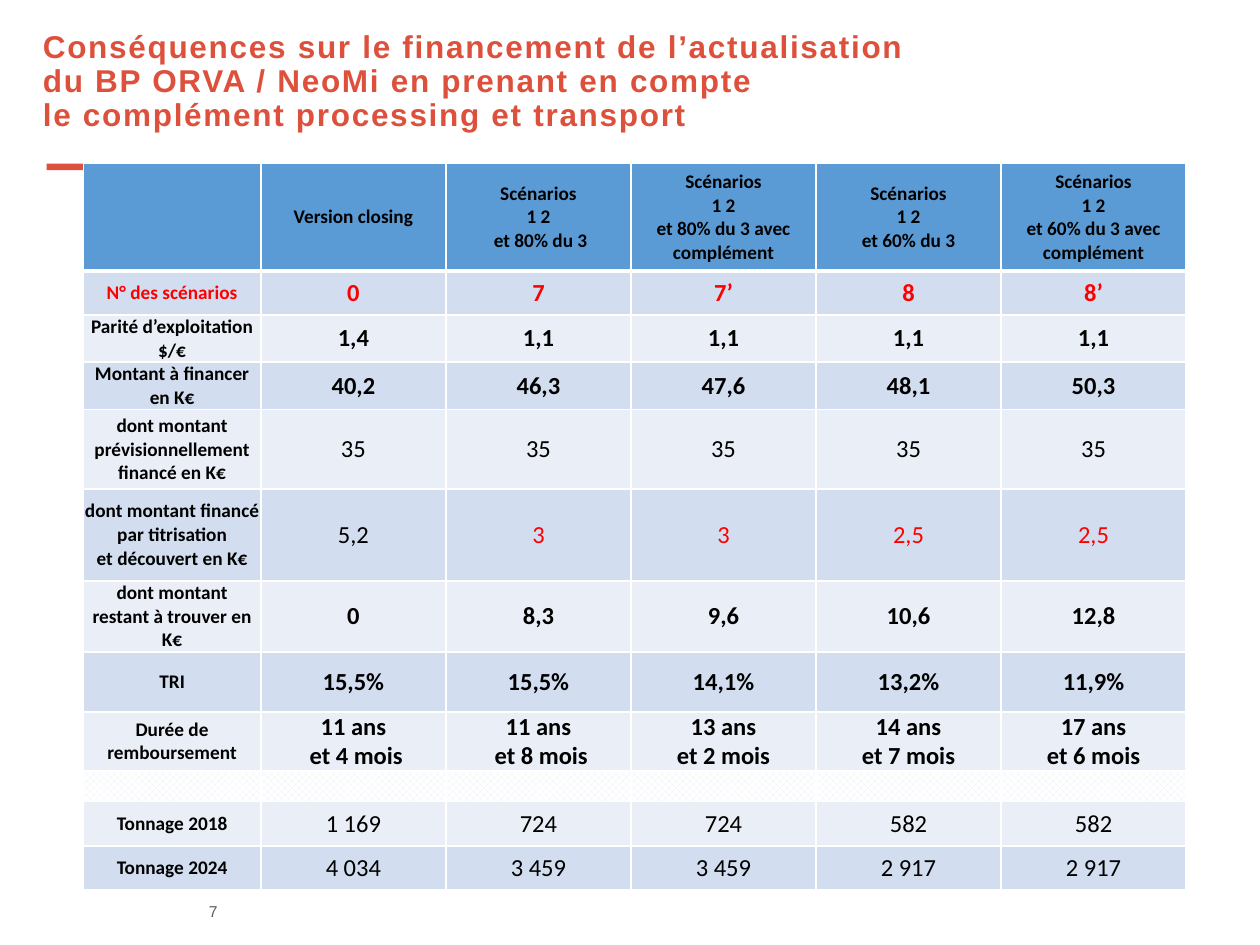
from dataclasses import dataclass

import lxml.etree
import pptx
import pptx.dml.color
import pptx.enum.dml
import pptx.enum.shapes
import pptx.enum.text
import pptx.oxml.ns
import pptx.util
from pptx.util import Cm

ALIGN = pptx.enum.text.PP_ALIGN
ANCHOR = pptx.enum.text.MSO_ANCHOR


@dataclass(frozen=True)
class Theme:
    heading_font: str = "Arial"
    body_font: str = "Calibri"
    accent: str = "DD503C"
    header: str = "5B9BD5"
    band_dark: str = "D2DEEF"
    band_light: str = "EAEFF7"
    white: str = "FFFFFF"
    text: str = "000000"
    alert: str = "FF0000"
    muted: str = "5F5F5F"
    title_size: int = 18
    label_size: int = 11
    value_size: int = 14
    number_size: int = 9
    border: int = 1
    header_border: int = 3


@dataclass(frozen=True)
class Row:
    height: float
    cells: tuple = ()
    bold: bool = True
    red_from: int = 99  # first column written in the alert colour


ROWS = (
    Row(2.16, ("", "Version closing",
               "Scénarios\n1 2\n et 80% du 3",
               "Scénarios\n1 2\net 80% du 3 avec complément",
               "Scénarios\n1 2\net 60% du 3",
               "Scénarios\n1 2\net 60% du 3 avec complément")),
    Row(0.89, ("N° des scénarios", "0", "7", "7’", "8", "8’"), red_from=0),
    Row(0.95, ("Parité d’exploitation $/€", "1,4", "1,1", "1,1", "1,1", "1,1")),
    Row(0.96, ("Montant à financer\nen K€", "40,2", "46,3", "47,6", "48,1", "50,3")),
    Row(1.6, ("dont montant prévisionnellement financé en K€",
              "35", "35", "35", "35", "35"), bold=False),
    Row(1.85, ("dont montant financé par titrisation\net découvert en K€",
               "5,2", "3", "3", "2,5", "2,5"), bold=False, red_from=2),
    Row(1.43, ("dont montant\nrestant à trouver en K€",
               "0", "8,3", "9,6", "10,6", "12,8")),
    Row(1.21, ("TRI", "15,5%", "15,5%", "14,1%", "13,2%", "11,9%")),
    Row(1.19, ("Durée de remboursement", "11 ans\n et 4 mois", "11 ans\n et 8 mois",
               "13 ans\net 2 mois", "14 ans\net 7 mois", "17 ans\net 6 mois")),
    Row(0.62),
    Row(0.89, ("Tonnage 2018", "1 169", "724", "724", "582", "582"), bold=False),
    Row(0.88, ("Tonnage 2024", "4 034", "3 459", "3 459", "2 917", "2 917"), bold=False),
)
COLUMN_WIDTHS = (3.58,) + (3.73,) * 5


def rgb(color):
    return pptx.dml.color.RGBColor.from_string(color)


def write_text(tf, text, *, font, size, color, bold=False, align=ALIGN.LEFT,
               line_spacing=None, tracking=None):
    """Fill tf: a newline starts a paragraph, a vertical tab breaks the line."""
    for i, paragraph in enumerate(text.split("\n")):
        p = tf.add_paragraph() if i else tf.paragraphs[0]
        p.alignment = align
        if line_spacing:
            p.line_spacing = line_spacing
        for j, line in enumerate(paragraph.split("\v")):
            if j:
                p.add_line_break()
            r = p.add_run()
            r.text = line
            r.font.name, r.font.size, r.font.bold = font, pptx.util.Pt(size), bold
            r.font.color.rgb = rgb(color)
            if tracking:
                r.font._element.set("spc", str(tracking * 100))


def set_borders(cell, color, widths):
    """Draw the left, right, top and bottom edges, with widths in points."""
    tc_pr = cell._tc.get_or_add_tcPr()
    qn = pptx.oxml.ns.qn
    for i, (side, width) in enumerate(zip("LRTB", widths)):
        ln = lxml.etree.Element(qn(f"a:ln{side}"), w=str(pptx.util.Pt(width)))
        fill = lxml.etree.SubElement(ln, qn("a:solidFill"))
        lxml.etree.SubElement(fill, qn("a:srgbClr"), val=color)
        tc_pr.insert(i, ln)


class SlideBuilder:
    def __init__(self, prs, theme):
        self.theme = theme
        self.slide = prs.slides.add_slide(prs.slide_layouts[5])

    def title(self, text, left, top, width, height):
        sp = self.slide.shapes.title
        sp.left, sp.top, sp.width, sp.height = map(Cm, (left, top, width, height))
        tf = sp.text_frame
        tf.word_wrap = True
        tf.auto_size = pptx.enum.text.MSO_AUTO_SIZE.NONE
        tf.vertical_anchor = ANCHOR.TOP
        write_text(tf, text, font=self.theme.heading_font, size=self.theme.title_size,
                   color=self.theme.accent, bold=True, line_spacing=0.9, tracking=1)

    def accent_bar(self, left, top, width, height):
        sp = self.slide.shapes.add_shape(pptx.enum.shapes.MSO_SHAPE.RECTANGLE,
                                         *map(Cm, (left, top, width, height)))
        sp.shadow.inherit = False
        sp.fill.solid()
        sp.fill.fore_color.rgb = rgb(self.theme.accent)
        sp.line.fill.background()

    def page_number(self, text, left, top, width, height):
        sp = self.slide.shapes.add_textbox(*map(Cm, (left, top, width, height)))
        tf = sp.text_frame
        tf.word_wrap = True
        tf.vertical_anchor = ANCHOR.MIDDLE
        tf.margin_top = tf.margin_bottom = 0
        write_text(tf, text, font=self.theme.heading_font,
                   size=self.theme.number_size, color=self.theme.muted)

    def table(self, rows, widths, left, top):
        height = sum(row.height for row in rows)
        table = self.slide.shapes.add_table(
            len(rows), len(widths), *map(Cm, (left, top, sum(widths), height))).table
        table.first_row = table.horz_banding = False
        for column, width in zip(table.columns, widths):
            column.width = Cm(width)
        for i, row in enumerate(rows):
            table.rows[i].height = Cm(row.height)
            for j in range(len(widths)):
                text = row.cells[j] if row.cells else ""
                self.cell(table.cell(i, j), row, text, i, j)

    def cell(self, cell, row, text, i, j):
        theme = self.theme
        cell.vertical_anchor = ANCHOR.MIDDLE
        cell.margin_left = cell.margin_right = cell.margin_top = cell.margin_bottom = 0
        if row.cells:
            cell.fill.solid()
            band = theme.band_dark if i % 2 else theme.band_light
            cell.fill.fore_color.rgb = rgb(band if i else theme.header)
        else:
            cell.fill.patterned()
            cell.fill.pattern = pptx.enum.dml.MSO_PATTERN.LARGE_CHECKER_BOARD
            cell.fill.fore_color.rgb = rgb(theme.band_light)
            cell.fill.back_color.rgb = rgb(theme.white)
        above = theme.header_border if i == 1 else theme.border
        below = theme.header_border if i == 0 else theme.border
        set_borders(cell, theme.white, (theme.border, theme.border, above, below))
        is_label = i == 0 or j == 0
        size = theme.label_size if is_label else theme.value_size
        if text:
            write_text(cell.text_frame, text, font=theme.body_font, size=size,
                       color=theme.alert if j >= row.red_from else theme.text,
                       bold=is_label or row.bold, align=ALIGN.CENTER)
        else:
            end = cell.text_frame.paragraphs[0]._p.get_or_add_endParaRPr()
            end.set("sz", str(size * 100))


def main():
    prs = pptx.Presentation()
    prs.slide_width, prs.slide_height = Cm(25.4), Cm(19.05)
    builder = SlideBuilder(prs, Theme())
    builder.page_number("7", 3.96, 18.14, 0.94, 0.46)
    builder.title("Conséquences sur le financement de l’actualisation\v"
                  "du BP ORVA / NeoMi en prenant en compte\v"
                  "le complément processing et transport", 0.61, 0.51, 22, 1.83)
    builder.accent_bar(0.94, 3.3, 1.5, 0.13)
    builder.table(ROWS, COLUMN_WIDTHS, 1.68, 3.3)
    prs.save("out.pptx")


if __name__ == "__main__":
    main()
